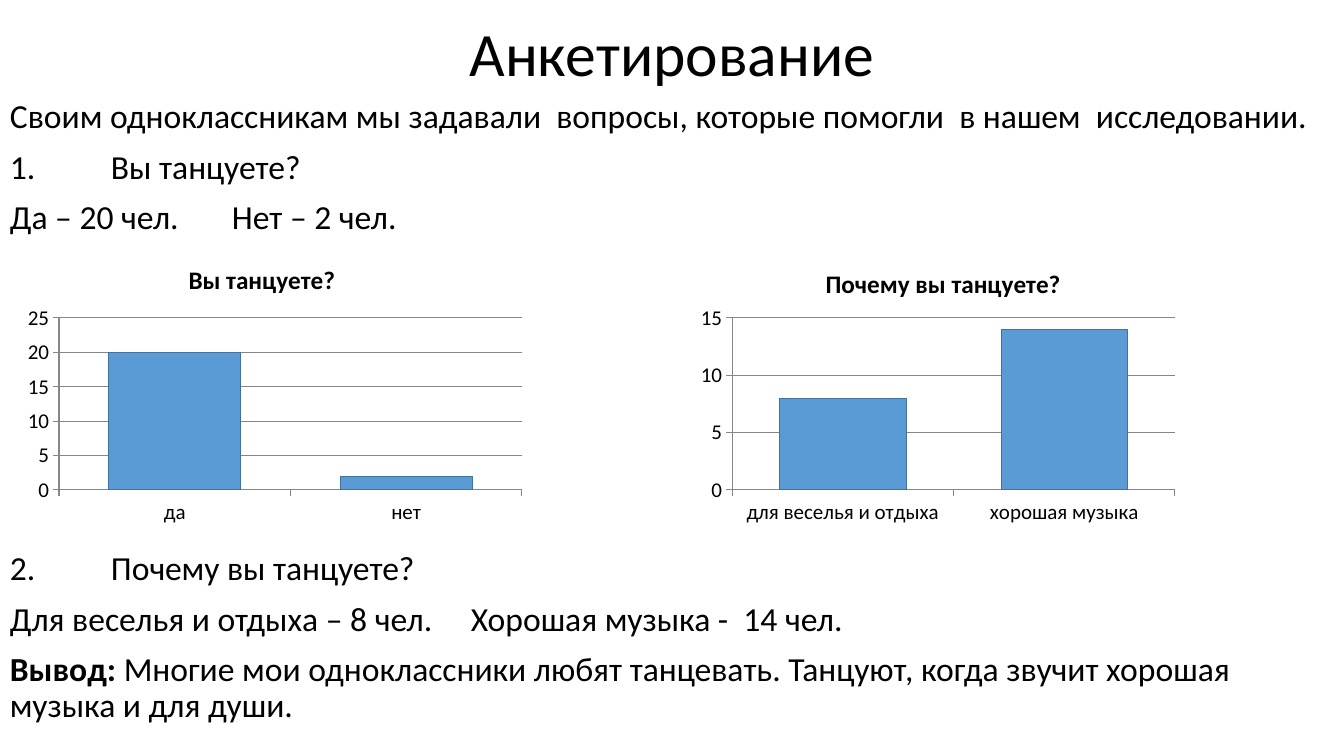
from lxml import etree
from pptx import Presentation
from pptx.chart.data import CategoryChartData
from pptx.dml.color import RGBColor
from pptx.enum.chart import XL_CHART_TYPE as ChartType, XL_TICK_MARK as Tick
from pptx.enum.text import MSO_ANCHOR as Anchor, PP_ALIGN as Align
from pptx.oxml.ns import qn
from pptx.util import Pt

WIDTH, HEIGHT = 1344, 756
SCALE = 12192000 / WIDTH
FONT = "Calibri"
GRID = "878787"


def px(length):
    return round(length * SCALE)


def color(value):
    return RGBColor.from_string(value)


def style(font, size, bold=False):
    for name, value in {"name": FONT, "size": Pt(size), "bold": bold}.items():
        setattr(font, name, value)
    font.color.rgb = color("000000")


def add_title(slide, box, text):
    title = slide.shapes.title
    for name, value in zip(("left", "top", "width", "height"), box):
        setattr(title, name, px(value))
    frame = title.text_frame
    frame.vertical_anchor = Anchor.MIDDLE
    heading = frame.paragraphs[0]
    heading.alignment = Align.CENTER
    heading.line_spacing = 0.9
    run = heading.add_run()
    run.text = text
    style(run.font, 44)


def add_survey(slide, box, lines):
    frame = slide.shapes.add_textbox(*map(px, box)).text_frame
    frame.word_wrap = True
    for index, (runs, gap, tab) in enumerate(lines):
        line = frame.add_paragraph() if index else frame.paragraphs[0]
        line.line_spacing = 0.9
        line.space_before = Pt(gap)
        if tab:
            stops = etree.SubElement(line._p.get_or_add_pPr(), qn("a:tabLst"))
            etree.SubElement(stops, qn("a:tab"), pos=str(px(tab)), algn="l")
        for text, bold in runs:
            run = line.add_run()
            run.text = text
            style(run.font, 24, bold)


def make_layout(values, inner=False):
    layout = etree.Element(qn("c:layout"))
    manual = etree.SubElement(layout, qn("c:manualLayout"))
    if inner:
        etree.SubElement(manual, qn("c:layoutTarget"), val="inner")
    for side in ("xMode", "yMode"):
        etree.SubElement(manual, qn(f"c:{side}"), val="edge")
    for name, value in zip("xywh", values):
        etree.SubElement(manual, qn(f"c:{name}"), val=f"{value:.4f}")
    return layout


def drop_layout(parent):
    for layout in parent.findall(qn("c:layout")):
        parent.remove(layout)


def add_answers(slide, box, question, title_at, plot, answers, top):
    left, upper, width, height = box
    data = CategoryChartData()
    data.categories = list(answers)
    data.add_series("Series 1", list(answers.values()))
    chart = slide.shapes.add_chart(ChartType.COLUMN_CLUSTERED, *map(px, box), data).chart
    chart.has_legend = False
    style(chart.font, 15)

    chart.has_title = True
    heading = chart.chart_title.text_frame.paragraphs[0].add_run()
    heading.text = question
    style(heading.font, 18, True)
    chart.chart_title.include_in_layout = False
    title = chart.chart_title._element
    drop_layout(title)
    x, y = title_at
    title.find(qn("c:tx")).addnext(make_layout((x / width, y / height)))

    area = chart._chartSpace.chart.plotArea
    drop_layout(area)
    x, y, w, h = plot
    area.insert(0, make_layout((x / width, y / height, w / width, h / height), True))

    counts = chart.value_axis
    settings = {"minimum_scale": 0, "maximum_scale": top, "major_unit": 5,
                "has_major_gridlines": True}
    for name, value in settings.items():
        setattr(counts, name, value)
    for axis in (counts, chart.category_axis):
        axis.major_tick_mark = Tick.OUTSIDE
        axis.minor_tick_mark = Tick.NONE
        axis.format.line.color.rgb = color(GRID)
        style(axis.tick_labels.font, 15)
    counts.major_gridlines.format.line.color.rgb = color(GRID)

    bars = chart.plots[0]
    bars.gap_width = 75
    bars.vary_by_categories = False
    look = bars.series[0].format
    look.fill.solid()
    look.fill.fore_color.rgb = color("5B9BD5")
    look.line.color.rgb = color("41719C")
    look.line.width = Pt(0.5)


def main():
    deck = Presentation()
    deck.slide_width, deck.slide_height = px(WIDTH), px(HEIGHT)
    slide = deck.slides.add_slide(deck.slide_layouts[5])
    add_title(slide, (0, 1, WIDTH, 111), "Анкетирование")
    add_survey(slide, (0, 95, WIDTH, 661), [
        ([("Своим одноклассникам мы задавали  вопросы, которые помогли  "
           "в нашем  исследовании.", False)], 0, None),
        ([("1.\tВы танцуете?", False)], 10, 101),
        ([("Да – 20 чел.\tНет – 2 чел.", False)], 10, 222),
        ([("2.\tПочему вы танцуете?", False)], 225, 101),
        ([("Для веселья и отдыха – 8 чел.\tХорошая музыка -  14 чел.", False)], 10, 461),
        ([("Вывод: ", True),
          ("Многие мои одноклассники любят танцевать. Танцуют, когда звучит "
           "хорошая музыка и для души.", False)], 10, None),
    ])
    add_answers(slide, (18, 243, 515, 288), "Вы танцуете?", (166, 15),
                (41, 75, 463, 172), {"да": 20, "нет": 2}, 25)
    add_answers(slide, (691, 243, 493, 288), "Почему вы танцуете?", (130, 19),
                (41, 75, 443, 172), {"для веселья и отдыха": 8, "хорошая музыка": 14}, 15)
    deck.save("out.pptx")


if __name__ == "__main__":
    main()
